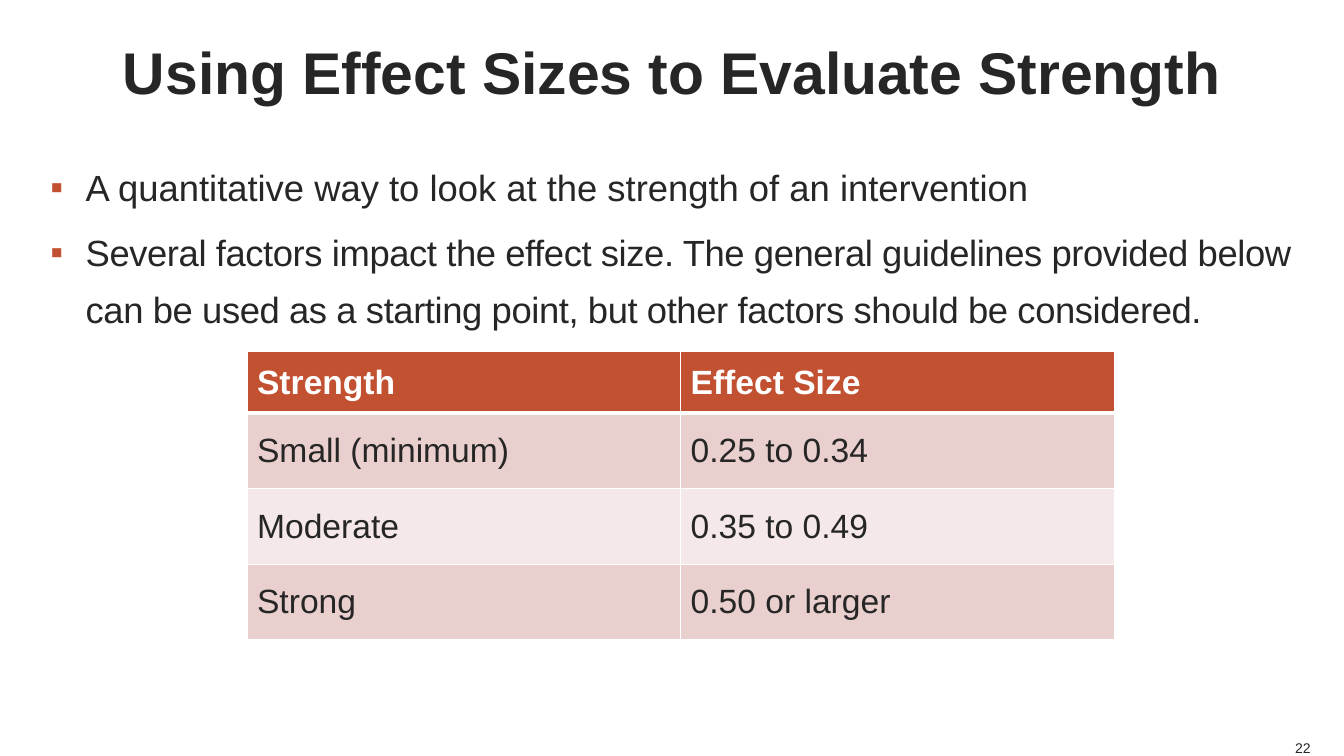
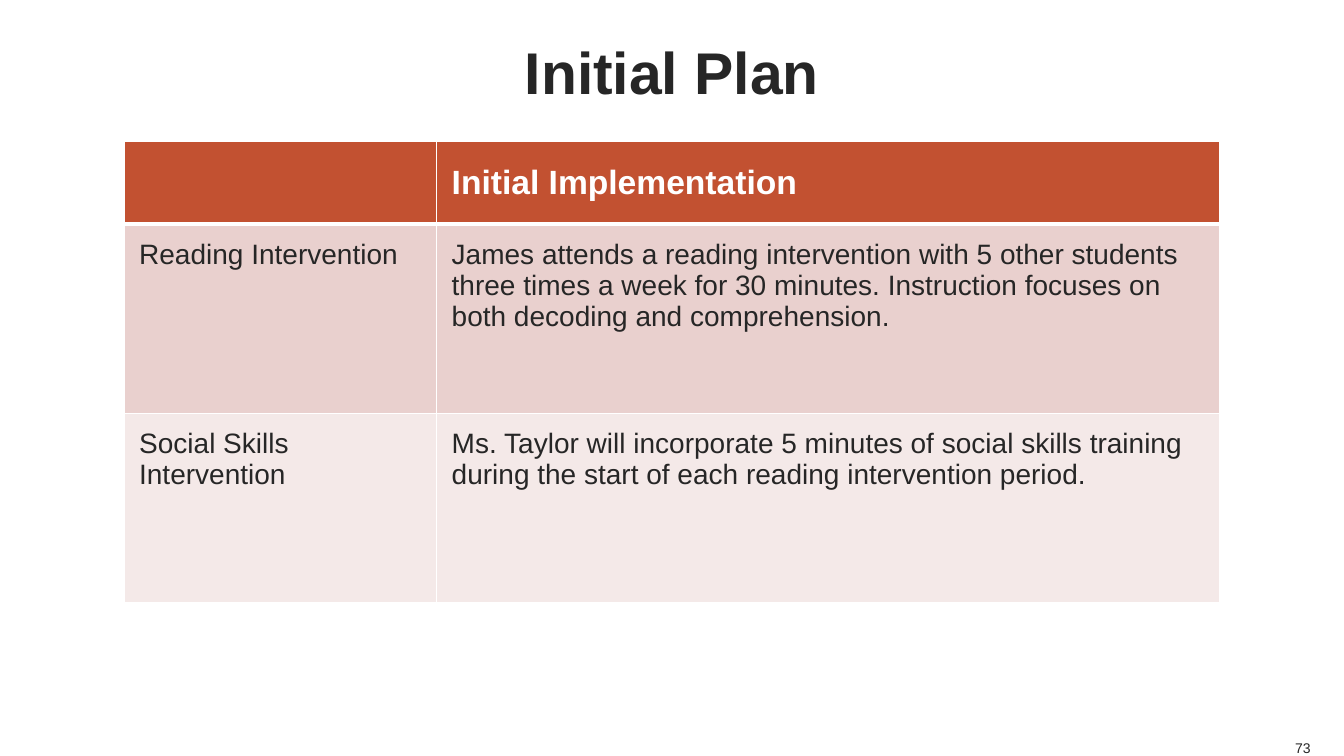
from lxml import etree
from pptx import Presentation
from pptx import util as u
from pptx.dml.color import RGBColor
from pptx.enum import text
from pptx.oxml import ns

FONT = "Arial"
INK, WHITE, ACCENT = "262626", "FFFFFF", "C25131"
BANDS = ("E9D0CE", "F4E9E8")
TITLE_BOX = (0.5, 0, 12.33, 1.4)
NUMBER_BOX = (12.5, 7.33, 0.5, 0.17)


def color(value):
    """Turn a hex string into a colour."""
    return RGBColor.from_string(value)


def write(paragraph, content, size, ink=INK, bold=False, align=text.PP_ALIGN.LEFT, tracking=None):
    """Fill a paragraph with one formatted run."""
    paragraph.alignment = align
    run = paragraph.add_run()
    run.text = content
    run.font.name, run.font.size, run.font.bold = FONT, u.Pt(size), bold
    run.font.color.rgb = color(ink)
    if tracking is not None:
        run.font._element.set("spc", str(round(tracking * 100)))


def add_frame(slide, box, anchor=text.MSO_ANCHOR.TOP):
    """Add a wrapped text box without margins and return its frame."""
    frame = slide.shapes.add_textbox(*map(u.Inches, box)).text_frame
    frame.word_wrap = True
    frame.vertical_anchor = anchor
    frame.margin_left = frame.margin_top = frame.margin_right = frame.margin_bottom = 0
    return frame


def add_slide(presentation, title, number):
    """Add a blank slide with the shared title and slide number."""
    slide = presentation.slides.add_slide(presentation.slide_layouts[6])
    frame = add_frame(slide, TITLE_BOX, text.MSO_ANCHOR.MIDDLE)
    write(frame.paragraphs[0], title, 42, bold=True, align=text.PP_ALIGN.CENTER)
    frame = add_frame(slide, NUMBER_BOX, text.MSO_ANCHOR.BOTTOM)
    write(frame.paragraphs[0], str(number), 10, align=text.PP_ALIGN.RIGHT)
    return slide


def set_bullet(paragraph, indent):
    """Give a paragraph a square accent bullet and a hanging indent."""
    properties = paragraph._p.get_or_add_pPr()
    properties.set("marL", str(u.Inches(indent)))
    properties.set("indent", str(-u.Inches(indent)))
    bullet_color = etree.SubElement(properties, ns.qn("a:buClr"))
    etree.SubElement(bullet_color, ns.qn("a:srgbClr")).set("val", ACCENT)
    etree.SubElement(properties, ns.qn("a:buFont")).set("typeface", FONT)
    etree.SubElement(properties, ns.qn("a:buChar")).set("char", "▪")


def add_bullets(slide, box, items):
    """Add a bulleted list of (text, tracking) items."""
    frame = add_frame(slide, box)
    for index, (content, tracking) in enumerate(items):
        paragraph = frame.add_paragraph() if index else frame.paragraphs[0]
        set_bullet(paragraph, 0.35)
        paragraph.line_spacing = 1.31
        if index:
            paragraph.space_before = u.Pt(6)
        write(paragraph, content, 26, tracking=tracking)


def set_borders(cell, top, bottom):
    """Draw white borders around a cell, with the given top and bottom widths."""
    properties = cell._tc.get_or_add_tcPr()
    for side, width in (("L", 1), ("R", 1), ("T", top), ("B", bottom)):
        line = etree.SubElement(properties, ns.qn(f"a:ln{side}"), w=str(u.Pt(width)))
        fill = etree.SubElement(line, ns.qn("a:solidFill"))
        etree.SubElement(fill, ns.qn("a:srgbClr")).set("val", WHITE)


def add_banded_table(slide, origin, widths, heights, rows, size, anchor, margins):
    """Add a table with an accent header row and banded body rows."""
    box = (*origin, sum(widths), sum(heights))
    table = slide.shapes.add_table(len(rows), len(widths), *map(u.Inches, box)).table
    for column, width in zip(table.columns, widths):
        column.width = u.Inches(width)
    for row_index, (row, height, contents) in enumerate(zip(table.rows, heights, rows)):
        row.height = u.Inches(height)
        header = row_index == 0
        for cell, content in zip(row.cells, contents):
            set_borders(cell, 3 if row_index == 1 else 1, 3 if header else 1)
            cell.fill.solid()
            cell.fill.fore_color.rgb = color(ACCENT if header else BANDS[(row_index - 1) % 2])
            cell.vertical_anchor = text.MSO_ANCHOR.MIDDLE if header else anchor
            cell.margin_left = cell.margin_right = u.Inches(margins[0])
            cell.margin_top = cell.margin_bottom = u.Inches(margins[1])
            if content:
                write(cell.text_frame.paragraphs[0], content, 24 if header else size,
                      ink=WHITE if header else INK, bold=header)


def build_effect_sizes(presentation):
    """Build the slide on effect sizes."""
    slide = add_slide(presentation, "Using Effect Sizes to Evaluate Strength", 22)
    add_bullets(slide, (0.5, 1.5, 12.51, 1.9), [
        ("A quantitative way to look at the strength of an intervention", None),
        ("Several factors impact the effect size. The general guidelines provided below "
         "can be used as a starting point, but other factors should be considered.", -0.3),
    ])
    add_banded_table(slide, (2.45, 3.49), [4.3] * 2, [0.61] + [0.75] * 3, [
        ("Strength", "Effect Size"),
        ("Small (minimum)", "0.25 to 0.34"),
        ("Moderate", "0.35 to 0.49"),
        ("Strong", "0.50 or larger"),
    ], size=24, anchor=text.MSO_ANCHOR.MIDDLE, margins=(0.1, 0.05))


def build_initial_plan(presentation):
    """Build the slide on the initial plan."""
    slide = add_slide(presentation, "Initial Plan", 73)
    add_banded_table(slide, (1.23, 1.4), [3.1, 7.77], [0.82] + [1.88] * 2, [
        ("", "Initial Implementation"),
        ("Reading Intervention",
         "James attends a reading intervention with 5 other students three times a week "
         "for 30 minutes. Instruction focuses on both decoding and comprehension."),
        ("Social Skills Intervention",
         "Ms. Taylor will incorporate 5 minutes of social skills training during the start "
         "of each reading intervention period."),
    ], size=20, anchor=text.MSO_ANCHOR.TOP, margins=(0.15, 0.15))


def main():
    """Build and save the presentation."""
    presentation = Presentation()
    presentation.slide_width = u.Inches(13.33)
    presentation.slide_height = u.Inches(7.5)
    build_effect_sizes(presentation)
    build_initial_plan(presentation)
    presentation.save("out.pptx")


if __name__ == "__main__":
    main()
